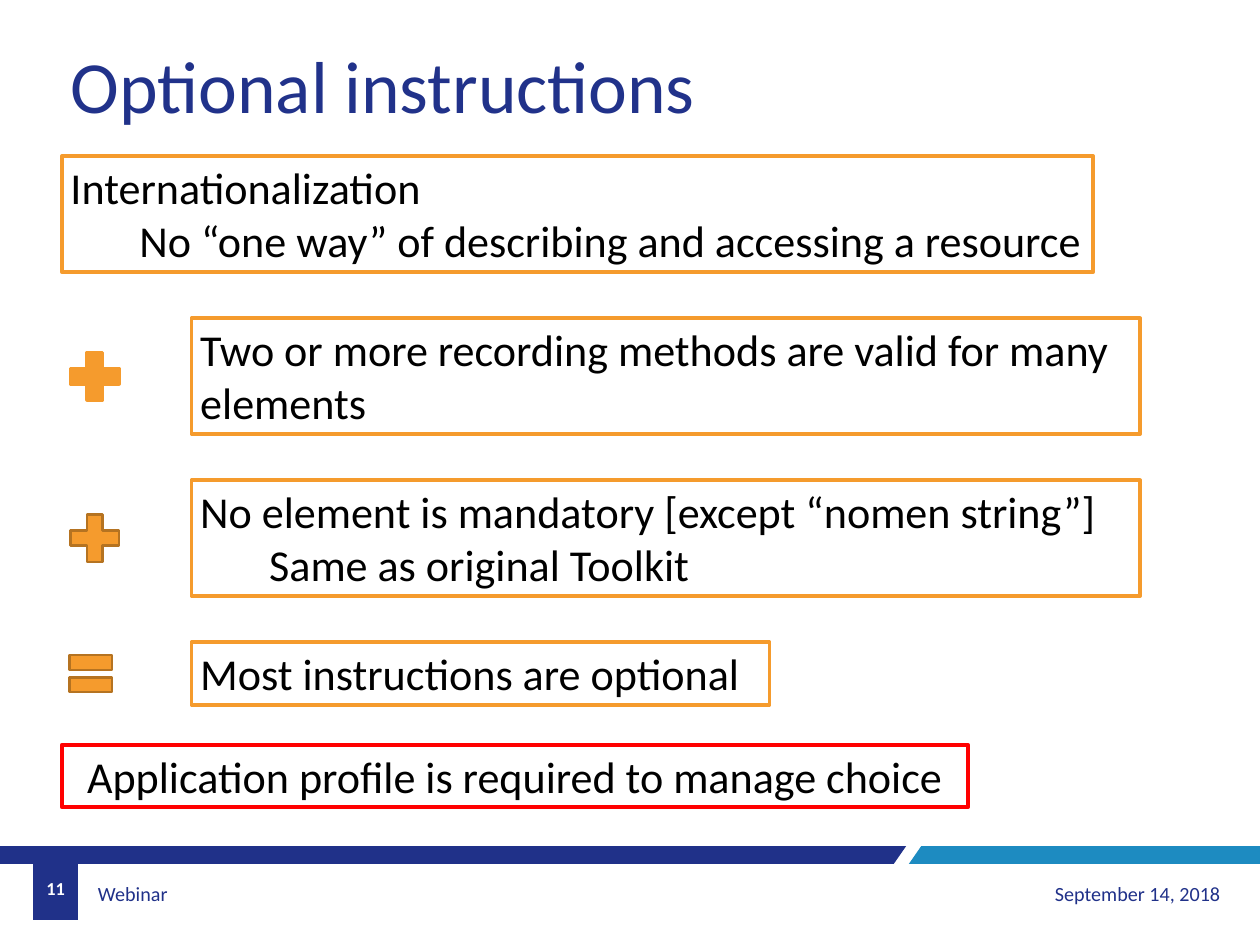
from pptx import Presentation
from pptx.dml.color import RGBColor
from pptx.enum.shapes import MSO_SHAPE as SHAPE
from pptx.enum.text import MSO_ANCHOR as ANCHOR, PP_ALIGN as ALIGN
from pptx.util import Pt

COLORS = {"navy": "203189", "title": "21328A", "blue": "1D8BC1", "orange": "F59B2D",
          "brown": "B57321", "red": "FF0000", "black": "000000", "white": "FFFFFF"}
WIDTH, HEIGHT = 1028.16, 771.12
LEFT, INDENTED = 50.4, 156.3
ROW_TOP, ROW_STEP = 127.5, 132.2
ONE_LINE, TWO_LINES = 51.1, 94.5


def color(name):
    return RGBColor.from_string(COLORS[name])


def write(shape, lines, size=36, ink="black", bold=False, align=ALIGN.LEFT,
          anchor=ANCHOR.MIDDLE, inset=(7.2, 3.6)):
    """Fill a shape with lines; every line after the first is indented."""
    tf = shape.text_frame
    tf.word_wrap = True
    tf.vertical_anchor = anchor
    tf.margin_left = tf.margin_right = Pt(inset[0])
    tf.margin_top = tf.margin_bottom = Pt(inset[1])
    for i, line in enumerate(lines):
        p = tf.paragraphs[0] if i == 0 else tf.add_paragraph()
        p.alignment = align
        if i:
            p._p.get_or_add_pPr().set("marL", str(Pt(56.2)))
        r = p.add_run()
        r.text = line
        r.font.name, r.font.size, r.font.bold = "Calibri", Pt(size), bold
        r.font.color.rgb = color(ink)


def add_text(s, box, text, **fmt):
    write(s.shapes.add_textbox(*map(Pt, box)), [text], **fmt)


def add_preset(s, kind, box, fill=None, line="orange", weight=3):
    sp = s.shapes.add_shape(kind, *map(Pt, box))
    sp.shadow.inherit = False
    if fill:
        sp.fill.solid()
        sp.fill.fore_color.rgb = color(fill)
    else:
        sp.fill.background()
    sp.line.color.rgb = color(line)
    sp.line.width = Pt(weight)
    return sp


def add_polygon(s, points, fill):
    start, *rest = [(Pt(x), Pt(y)) for x, y in points]
    builder = s.shapes.build_freeform(*start, scale=1.0)
    builder.add_line_segments(rest, close=True)
    sp = builder.convert_to_shape()
    sp.shadow.inherit = False
    sp.fill.solid()
    sp.fill.fore_color.rgb = color(fill)
    sp.line.fill.background()


def add_footer(s, left, top, width):
    right, low = left + width, top + 14.4
    tab_left, tab_right, tab_low = left + 26.6, left + 64, top + 60.5
    add_polygon(s, [(left, top), (left + 739.4, top), (left + 729.4, low), (left, low)], "navy")
    add_polygon(s, [(left + 751.7, top), (right, top), (right, low), (left + 741.7, low)], "blue")
    add_polygon(s, [(tab_left, top), (tab_right, top), (tab_right, tab_low),
                    (tab_left, tab_low)], "navy")
    text_top, text_height = top + 18.7, 39.6
    add_text(s, (left + 74.9, text_top, 289.4, text_height), "Webinar",
             size=16.4, ink="navy", inset=(5, 2.9))
    add_text(s, (right - 288.8, text_top, 263.5, text_height), "September 14, 2018",
             size=16.4, ink="navy", align=ALIGN.RIGHT)
    add_text(s, (tab_left, low, tab_right - tab_left, text_height), "11",
             size=14.9, ink="white", bold=True, align=ALIGN.CENTER)


def add_statement(s, box, lines, line="orange", align=ALIGN.LEFT):
    write(add_preset(s, SHAPE.RECTANGLE, box, line=line), lines, align=align, anchor=ANCHOR.TOP)


def add_argument(s, left, top):
    """Stack the statements, each with its operator in the left margin."""
    plus, equal = SHAPE.MATH_PLUS, SHAPE.MATH_EQUAL
    rows = [
        (LEFT, 841.7, TWO_LINES, None, None, None,
         ["Internationalization", "No “one way” of describing and accessing a resource"]),
        (INDENTED, 774, TWO_LINES, plus, (54, 52.6), ("orange", 3),
         ["Two or more recording methods are valid for many elements"]),
        (INDENTED, 774, TWO_LINES, plus, (54, 52.6), ("brown", 2),
         ["No element is mandatory [except “nomen string”]", "Same as original Toolkit"]),
        (INDENTED, 471.6, ONE_LINE, equal, (47.5, 51.1), ("brown", 2),
         ["Most instructions are optional"]),
    ]
    for i, (x, width, height, sign, size, outline, lines) in enumerate(rows):
        y = top + i * ROW_STEP
        add_statement(s, (x, y, width, height), lines)
        if sign:
            w, h = size
            add_preset(s, sign, (left, y + (height - h) / 2, w, h), "orange", *outline)


def main():
    prs = Presentation()
    prs.slide_width, prs.slide_height = Pt(WIDTH), Pt(HEIGHT)
    s = prs.slides.add_slide(prs.slide_layouts[6])
    add_footer(s, 0, 690.5, WIDTH)
    add_text(s, (LEFT, 28.8, 530, 80), "Optional instructions",
             size=60, ink="title", anchor=ANCHOR.TOP)
    add_argument(s, LEFT, ROW_TOP)
    add_statement(s, (LEFT, 607.7, 739.4, ONE_LINE),
                  ["Application profile is required to manage choice"], "red", ALIGN.CENTER)
    prs.save("out.pptx")


if __name__ == "__main__":
    main()
